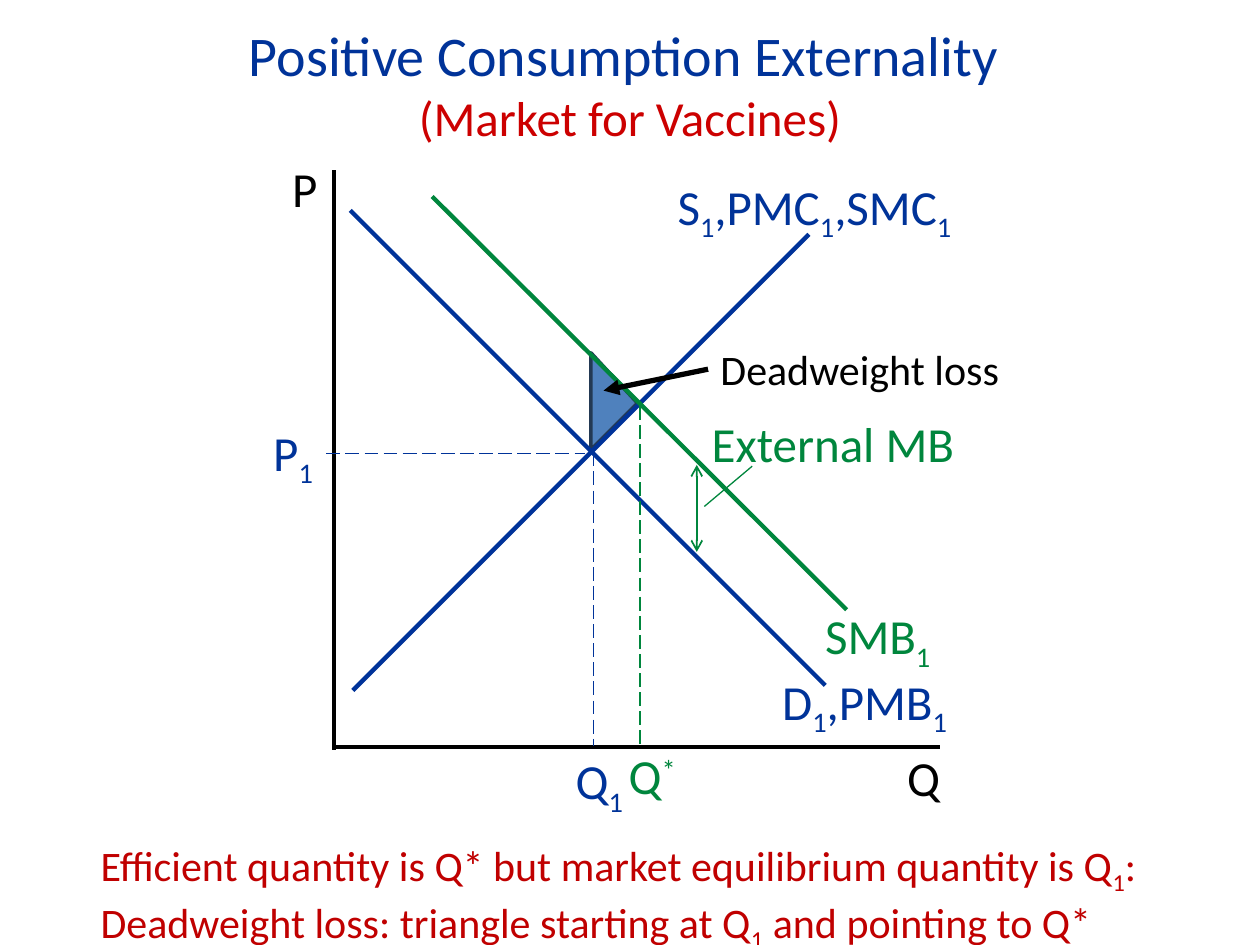
from dataclasses import dataclass
from typing import Optional

from lxml import etree
from pptx import Presentation
from pptx import util as u
from pptx.dml import color
from pptx.enum import dml, shapes, text
from pptx.oxml import ns

BLUE, GREEN, BLACK = "003399", "00863D", "000000"
RED, DARK_RED = "CC0000", "C00000"
TRIANGLE_FILL, TRIANGLE_EDGE = "4F81BD", "233953"
FONT = "Calibri"
BASELINES = {"_": "-25000", "^": "30000"}


@dataclass
class Label:
    content: str
    left: float
    top: float
    width: float
    height: float
    hue: str
    spacing: Optional[float] = None


@dataclass
class Segment:
    start: tuple[float, float]
    end: tuple[float, float]
    hue: str
    weight: float = 2.5
    dashed: bool = False
    head: str = ""
    tail: str = ""


def rgb(value: str) -> color.RGBColor:
    return color.RGBColor.from_string(value)


def add_span(para, content: str, size: float, hue: str, baseline: str = "") -> None:
    span = para.add_run()
    span.text = content
    span.font.name = FONT
    span.font.size = u.Pt(size)
    span.font.color.rgb = rgb(hue)
    if baseline:
        span._r.get_or_add_rPr().set("baseline", baseline)


def write(para, content: str, *, size: float = 28, hue: str = BLACK,
          align=None, spacing: Optional[float] = None) -> None:
    para.alignment = align
    para.line_spacing = spacing
    plain = ""
    letters = iter(content)
    for letter in letters:
        if letter in BASELINES:
            add_span(para, plain, size, hue)
            add_span(para, next(letters), size, hue, BASELINES[letter])
            plain = ""
        else:
            plain += letter
    if plain:
        add_span(para, plain, size, hue)


def add_box(page, left: float, top: float, width: float, height: float,
            wrap: bool = True, anchor=text.MSO_ANCHOR.TOP):
    box = page.shapes.add_textbox(*map(u.Inches, (left, top, width, height)))
    box.text_frame.word_wrap = wrap
    box.text_frame.vertical_anchor = anchor
    return box


def draw_label(page, label: Label) -> None:
    box = add_box(page, label.left, label.top, label.width, label.height)
    write(box.text_frame.paragraphs[0], label.content, hue=label.hue, spacing=label.spacing)


def draw_segment(page, segment: Segment):
    connector = page.shapes.add_connector(
        shapes.MSO_CONNECTOR.STRAIGHT, *map(u.Inches, segment.start + segment.end))
    connector.line.color.rgb = rgb(segment.hue)
    connector.line.width = u.Pt(segment.weight)
    if segment.dashed:
        connector.line.dash_style = dml.MSO_LINE.LONG_DASH
    outline = connector.line._get_or_add_ln()
    for tag, kind in (("a:headEnd", segment.head), ("a:tailEnd", segment.tail)):
        if kind:
            etree.SubElement(outline, ns.qn(tag)).set("type", kind)
    etree.SubElement(connector._element.spPr, ns.qn("a:effectLst"))
    return connector


def draw_loss_triangle(page) -> None:
    top, bottom, tip = [(u.Inches(x), u.Inches(y))
                        for x, y in ((4.69, 2.8), (4.69, 3.57), (5.06, 3.2))]
    builder = page.shapes.build_freeform(*top)
    builder.add_line_segments([bottom, tip], close=True)
    triangle = builder.convert_to_shape()
    triangle.shadow.inherit = False
    triangle.fill.solid()
    triangle.fill.fore_color.rgb = rgb(TRIANGLE_FILL)
    triangle.line.color.rgb = rgb(TRIANGLE_EDGE)
    triangle.line.width = u.Pt(2)


def draw_title(page) -> None:
    box = add_box(page, 0.7, 0.11, 8.6, 1.11, anchor=text.MSO_ANCHOR.MIDDLE)
    frame = box.text_frame
    center = text.PP_ALIGN.CENTER
    write(frame.paragraphs[0], "Positive Consumption Externality ",
          size=32, hue=BLUE, align=center)
    write(frame.add_paragraph(), "(Market for Vaccines)", hue=RED, align=center)


def draw_conclusion(page) -> None:
    frame = add_box(page, 0.7, 6.61, 8.72, 0.91).text_frame
    write(frame.paragraphs[0],
          "Efficient quantity is Q* but market equilibrium quantity is Q_1:",
          size=24, hue=DARK_RED)
    write(frame.add_paragraph(),
          "Deadweight loss: triangle starting at Q_1 and pointing to Q*",
          size=24, hue=DARK_RED)


def draw_loss_callout(page) -> None:
    box = add_box(page, 5.62, 2.68, 2.43, 0.5, wrap=False)
    write(box.text_frame.paragraphs[0], "Deadweight loss", size=24)
    arrow = draw_segment(page, Segment((5.62, 2.93), (4.79, 3.1), BLACK, 3, tail="triangle"))
    arrow.begin_connect(box, 1)


SEGMENTS = [
    Segment((2.8, 5.48), (6.42, 1.86), BLUE),
    Segment((2.65, 1.35), (2.65, 5.95), BLACK),
    Segment((2.66, 5.93), (7.46, 5.93), BLACK),
    Segment((2.78, 1.67), (6.55, 5.44), BLUE),
    Segment((4.71, 3.59), (4.71, 5.92), BLUE, 1, dashed=True),
    Segment((5.53, 3.69), (5.53, 4.38), GREEN, 1, head="arrow", tail="arrow"),
    Segment((5.97, 3.7), (5.59, 4.02), GREEN, 0.75),
    Segment((3.43, 1.56), (6.72, 4.84), GREEN),
    Segment((5.08, 3.22), (5.08, 5.92), GREEN, 1, dashed=True),
    Segment((2.59, 3.6), (4.64, 3.6), BLUE, 1, dashed=True),
]

LABELS = [
    Label("D_1,PMB_1", 6.11, 5.28, 1.58, 0.57, BLUE),
    Label("Q", 7.1, 5.88, 0.51, 0.57, BLACK),
    Label("P", 2.22, 1.3, 0.45, 0.49, BLACK, 0.8),
    Label("S_1,PMC_1,SMC_1", 5.28, 1.35, 2.5, 0.57, BLUE),
    Label("Q_1", 4.47, 5.96, 0.75, 0.48, BLUE, 0.8),
    Label("SMB_1", 6.45, 4.76, 1.2, 0.57, GREEN),
    Label("External MB", 5.55, 3.23, 2.15, 0.57, GREEN),
    Label("Q^*", 4.89, 5.96, 0.75, 0.49, GREEN, 0.8),
    Label("P_1", 2.07, 3.35, 0.58, 0.49, BLUE, 0.8),
]


def main() -> None:
    deck = Presentation()
    deck.slide_width, deck.slide_height = u.Inches(10), u.Inches(7.5)
    page = deck.slides.add_slide(deck.slide_layouts[6])
    draw_loss_triangle(page)
    draw_title(page)
    for segment in SEGMENTS:
        draw_segment(page, segment)
    for label in LABELS:
        draw_label(page, label)
    draw_conclusion(page)
    draw_loss_callout(page)
    deck.save("out.pptx")


if __name__ == "__main__":
    main()
